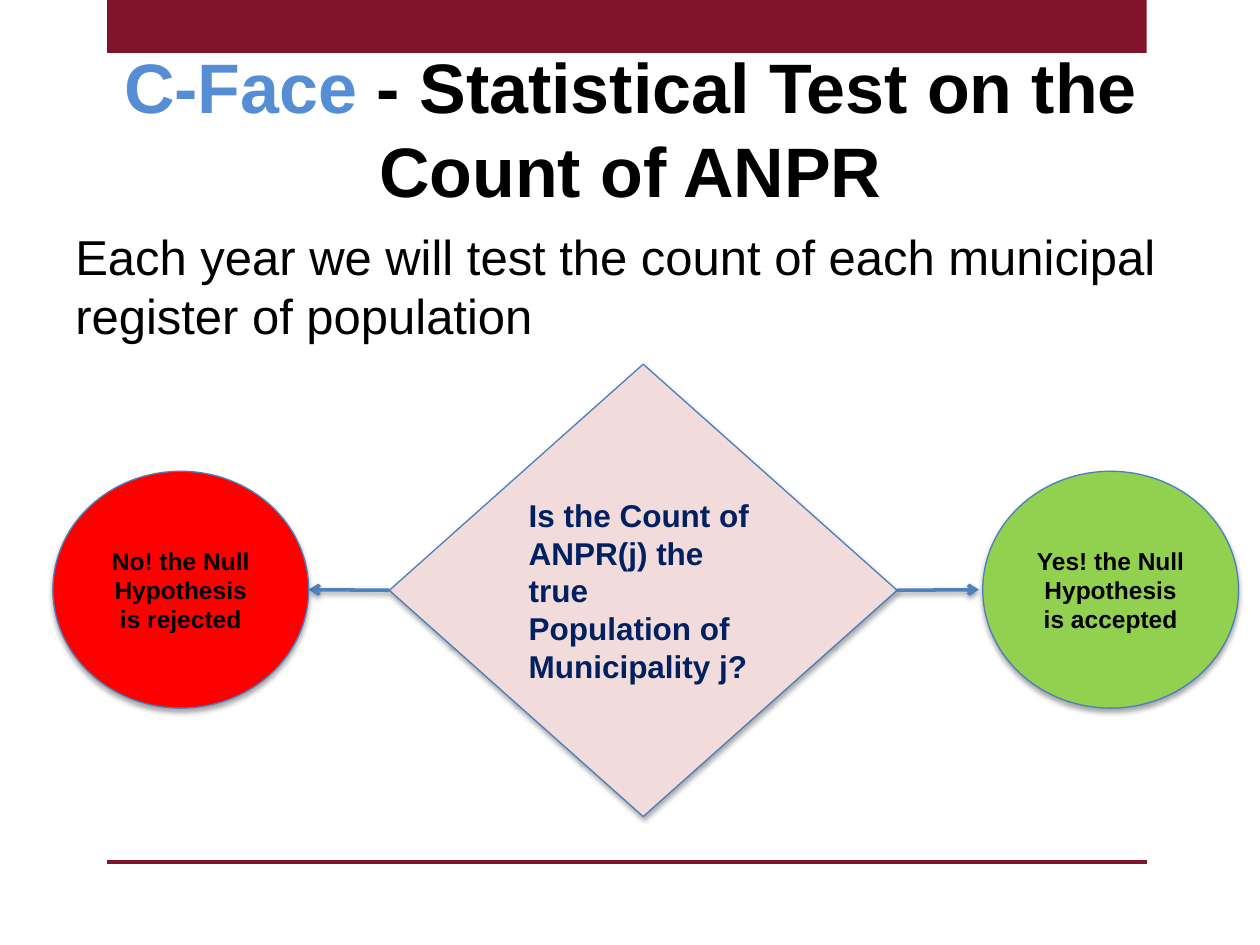
"""Build a slide on the yearly statistical test of the ANPR count."""
from dataclasses import dataclass
from typing import Optional

from lxml import etree
from pptx import Presentation
from pptx import util as u
from pptx.dml.color import RGBColor
from pptx.enum import shapes, text
from pptx.oxml import ns

COLUMNS, ROWS = 100, 75
CELL = u.Inches(0.1)

MAROON = RGBColor(0x7F, 0x14, 0x2A)
SKY = RGBColor(0x55, 0x8E, 0xD5)
BLACK = RGBColor(0, 0, 0)
NAVY = RGBColor(0x00, 0x20, 0x60)
PINK = RGBColor(0xF2, 0xDC, 0xDB)
GREEN = RGBColor(0x92, 0xD0, 0x50)
RED = RGBColor(0xFF, 0, 0)
OUTLINE = RGBColor(0x4B, 0x7E, 0xBC)
ARROW = RGBColor(0x4F, 0x81, 0xBD)
LEFT, CENTER = text.PP_ALIGN.LEFT, text.PP_ALIGN.CENTER


@dataclass(frozen=True)
class Box:
    column: float
    row: float
    columns: float
    rows: float

    def emu(self) -> list[int]:
        """Return left, top, width and height in EMU."""
        return [round(CELL * n) for n in (self.column, self.row, self.columns, self.rows)]


@dataclass(frozen=True)
class Node:
    kind: shapes.MSO_SHAPE
    box: Box
    fill: RGBColor
    words: str
    size: int
    color: RGBColor
    align: text.PP_ALIGN


BAND = Box(8.5, 0, 82.5, 4.2)
TITLE = Box(1.8, 3, 96.5, 12.5)
BODY = Box(5, 17.5, 90, 49.5)
AXIS_ROW, RULE_ROW = 46.8, 68.4
QUESTION = Node(shapes.MSO_SHAPE.DIAMOND, Box(30.9, 28.9, 40.3, 35.9), PINK,
                "Is the Count of ANPR(j) the true Population of Municipality j?", 18, NAVY, LEFT)
ACCEPTED = Node(shapes.MSO_SHAPE.OVAL, Box(78, 37.4, 20.3, 18.8), GREEN,
                "Yes! the Null Hypothesis is accepted", 14, BLACK, CENTER)
REJECTED = Node(shapes.MSO_SHAPE.OVAL, Box(4.2, 37.4, 20.3, 18.8), RED,
                "No! the Null Hypothesis is rejected", 14, BLACK, CENTER)


def add_effects(shape, opacity: int = 0, distance: float = 0) -> None:
    """Give the shape a soft downward shadow, or none when opacity is zero."""
    properties = shape._element.spPr
    for old in properties.findall(ns.qn("a:effectLst")):
        properties.remove(old)
    effects = etree.SubElement(properties, ns.qn("a:effectLst"))
    if opacity:
        shadow = etree.SubElement(effects, ns.qn("a:outerShdw"), blurRad=str(u.Pt(3.1)),
                                  dist=str(u.Pt(distance)), dir="5400000", rotWithShape="0")
        color = etree.SubElement(shadow, ns.qn("a:srgbClr"), val="000000")
        etree.SubElement(color, ns.qn("a:alpha"), val=str(opacity * 1000))


def format_run(run, size: int, color: RGBColor, bold: bool) -> None:
    """Set the font of one run."""
    run.font.name = "Arial"
    run.font.size = u.Pt(size)
    run.font.bold = bold
    run.font.color.rgb = color


def add_text(slide, box: Box, parts: list[tuple[str, RGBColor]], size: int,
             bold: bool, align: text.PP_ALIGN) -> None:
    """Add a wrapped text box holding one paragraph of coloured parts."""
    frame = slide.shapes.add_textbox(*box.emu()).text_frame
    frame.word_wrap = True
    paragraph = frame.paragraphs[0]
    paragraph.alignment = align
    for words, color in parts:
        run = paragraph.add_run()
        run.text = words
        format_run(run, size, color, bold)


def add_node(slide, node: Node):
    """Add a labelled flowchart shape."""
    shape = slide.shapes.add_shape(node.kind, *node.box.emu())
    shape.fill.solid()
    shape.fill.fore_color.rgb = node.fill
    shape.line.color.rgb = OUTLINE
    shape.line.width = u.Pt(0.75)
    add_effects(shape, 35, 1.8)
    frame = shape.text_frame
    frame.text = node.words
    frame.word_wrap = True
    frame.vertical_anchor = text.MSO_ANCHOR.MIDDLE
    paragraph = frame.paragraphs[0]
    paragraph.alignment = node.align
    format_run(paragraph.runs[0], node.size, node.color, True)
    return shape


def add_line(slide, start: float, end: float, row: float, color: RGBColor,
             arrow: Optional[str] = None):
    """Add a horizontal line, with a shadow when it carries an arrowhead."""
    x1, x2, y = (round(CELL * n) for n in (start, end, row))
    line = slide.shapes.add_connector(shapes.MSO_CONNECTOR.STRAIGHT, x1, y, x2, y)
    line.line.color.rgb = color
    line.line.width = u.Pt(2)
    if arrow:
        etree.SubElement(line.line._get_or_add_ln(), ns.qn("a:tailEnd"), type=arrow)
        add_effects(line, 38, 1.6)
    else:
        add_effects(line)
    return line


def main() -> None:
    """Compose and save the slide."""
    presentation = Presentation()
    presentation.slide_width = CELL * COLUMNS
    presentation.slide_height = CELL * ROWS
    slide = presentation.slides.add_slide(presentation.slide_layouts[6])

    band = slide.shapes.add_shape(shapes.MSO_SHAPE.RECTANGLE, *BAND.emu())
    band.shadow.inherit = False
    band.fill.solid()
    band.fill.fore_color.rgb = MAROON
    band.line.fill.background()
    add_line(slide, BAND.column, BAND.column + BAND.columns, RULE_ROW, MAROON)

    add_text(slide, TITLE, [("C-Face", SKY), (" - Statistical Test on the Count of ANPR", BLACK)],
             40, True, CENTER)
    add_text(slide, BODY, [("Each year we will test the count of each municipal "
                            "register of population", BLACK)], 28, False, LEFT)

    question = add_node(slide, QUESTION)
    to_accepted = add_line(slide, 71.2, 77.7, AXIS_ROW, ARROW, "arrow")
    to_rejected = add_line(slide, 30.9, 24.5, AXIS_ROW, ARROW, "arrow")
    add_node(slide, ACCEPTED)
    rejected = add_node(slide, REJECTED)
    to_accepted.begin_connect(question, 3)
    to_rejected.begin_connect(question, 1)
    to_rejected.end_connect(rejected, 3)
    to_rejected.end_x = round(CELL * 24.5)

    presentation.save("out.pptx")


if __name__ == "__main__":
    main()
